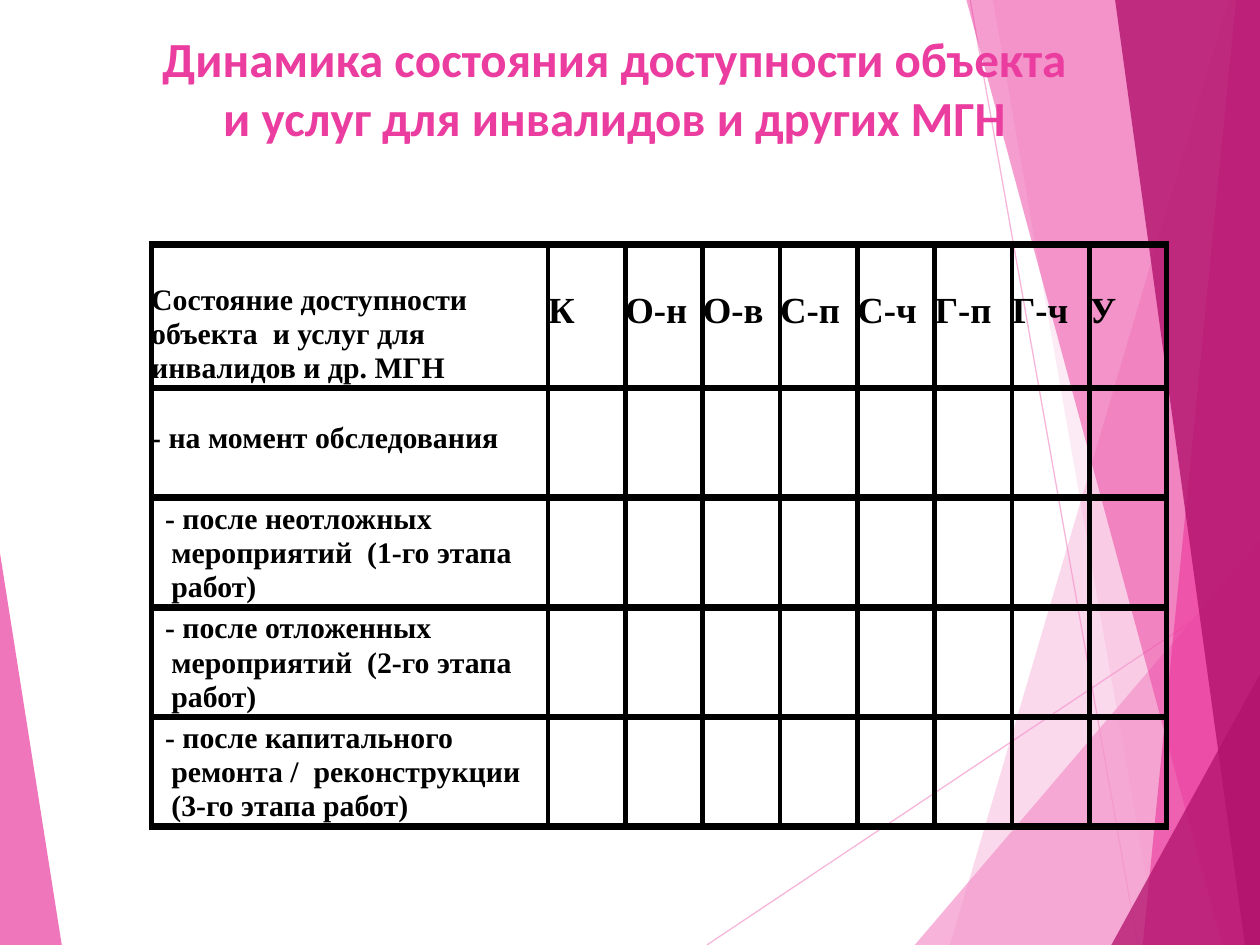
from lxml.etree import SubElement
from pptx import Presentation
from pptx.dml.color import RGBColor
from pptx.enum.text import MSO_ANCHOR, MSO_AUTO_SIZE, PP_ALIGN
from pptx.oxml import parse_xml
from pptx.oxml.ns import nsdecls, qn
from pptx.util import Inches, Pt

COLS, ROWS = 100, 75
WIDTH, HEIGHT = Inches(10), Inches(7.5)

BLACK = RGBColor(0x00, 0x00, 0x00)
LIGHT_PINK = RGBColor(0xF4, 0x96, 0xCB)
PINK = RGBColor(0xEB, 0x3D, 0x9F)
DARK_PINK = RGBColor(0xB2, 0x13, 0x6D)

TITLE = "Динамика состояния доступности объекта\vи услуг для инвалидов и других МГН"
HEADER = "Состояние доступности объекта  и услуг для инвалидов и др. МГН"
STATES = ["К", "О-н", "О-в", "С-п", "С-ч", "Г-п", "Г-ч", "У"]
SURVEY = "- на момент обследования"
STAGES = [
    "- после неотложных мероприятий  (1-го этапа работ)",
    "- после отложенных мероприятий  (2-го этапа работ)",
    "- после капитального ремонта /  реконструкции (3-го этапа работ)",
]

RAYS = [((56.1, 75), (100, 45.7)), ((77, 0), (90.3, 75))]
FACETS = [
    ([(97.5, 0), (75.4, 75), (100, 75), (100, 0)], LIGHT_PINK, 36),
    ([(78.8, 0), (91.9, 75), (100, 75), (100, 0)], LIGHT_PINK, 20),
    ([(72.6, 75), (100, 42.9), (100, 75)], LIGHT_PINK, 72),
    ([(76.7, 0), (97, 75), (100, 75), (100, 0)], PINK, 50),
    ([(98.1, 0), (90.7, 75), (100, 75), (100, 0)], PINK, 66),
    ([(88.5, 0), (98.8, 75), (100, 75), (100, 0)], DARK_PINK, 80),
    ([(88.2, 75), (100, 53.5), (100, 75)], DARK_PINK, 76),
    ([(0, 43.9), (4.9, 75), (0, 75)], PINK, 70),
]


def x(cols):
    return round(WIDTH * cols / COLS)


def y(rows):
    return round(HEIGHT * rows / ROWS)


def set_opacity(shape, percent):
    for clr in shape._element.spPr.iter(qn("a:srgbClr")):
        SubElement(clr, qn("a:alpha"), val=str(percent * 1000))


def write(tf, text, size, font, color, align=PP_ALIGN.LEFT, leading=None,
          before=0, indent=(0, 0)):
    """Fill a text frame; indent is (left margin, first line) in columns."""
    tf.word_wrap = True
    tf.text = text
    p = tf.paragraphs[0]
    p.alignment = align
    p.space_before = Pt(before)
    if leading:
        p.line_spacing = Pt(leading)
    pPr = p._p.get_or_add_pPr()
    pPr.set("marL", str(x(indent[0])))
    pPr.set("indent", str(x(indent[1])))
    for r in p.runs:
        r.font.size = Pt(size)
        r.font.name = font
        r.font.bold = True
        r.font.color.rgb = color


class Deck:
    title_font = "Calibri"
    table_font = "Times New Roman"
    side_border, level_border = 3, 4.25

    def __init__(self):
        self.prs = Presentation()
        self.prs.slide_width, self.prs.slide_height = WIDTH, HEIGHT
        self.s = self.prs.slides.add_slide(self.prs.slide_layouts[5])

    def ray(self, start, end):
        line = self.s.shapes.add_connector(
            1, x(start[0]), y(start[1]), x(end[0]), y(end[1]))
        line.line.color.rgb = LIGHT_PINK
        line.line.width = Pt(0.75)
        SubElement(line._element.spPr, qn("a:effectLst"))
        set_opacity(line, 70)

    def facet(self, points, color, opacity):
        corners = [(x(col), y(row)) for col, row in points]
        builder = self.s.shapes.build_freeform(*corners[0])
        builder.add_line_segments(corners[1:], close=True)
        sp = builder.convert_to_shape()
        sp.shadow.inherit = False
        sp.line.fill.background()
        sp.fill.solid()
        sp.fill.fore_color.rgb = color
        set_opacity(sp, opacity)

    def title(self, text, left, top, width, height):
        """Format the title placeholder and bring it to the front."""
        sp = self.s.shapes.title
        self.s.shapes._spTree.append(sp._element)
        sp.left, sp.top, sp.width, sp.height = x(left), y(top), x(width), y(height)
        tf = sp.text_frame
        tf.auto_size = MSO_AUTO_SIZE.NONE
        tf.vertical_anchor = MSO_ANCHOR.TOP
        tf.margin_left = tf.margin_right = tf.margin_bottom = 0
        tf.margin_top = y(0.1)
        write(tf, text, 28, self.title_font, PINK, align=PP_ALIGN.CENTER)

    def table(self, left, top, widths, heights):
        frame = self.s.shapes.add_table(
            len(heights), len(widths), x(left), y(top), x(sum(widths)), y(sum(heights)))
        table = frame.table
        table.first_row = table.horz_banding = False
        for column, width in zip(table.columns, widths):
            column.width = x(width)
        for row, height in zip(table.rows, heights):
            row.height = y(height)
        for cell in table.iter_cells():
            cell.fill.background()
            cell.margin_left = cell.margin_right = cell.margin_top = cell.margin_bottom = 0
            self.borders(cell)
        return table

    def borders(self, cell):
        tcPr = cell._tc.get_or_add_tcPr()
        for i, side in enumerate("LRTB"):
            points = self.side_border if side in "LR" else self.level_border
            tcPr.insert(i, parse_xml(
                f'<a:ln{side} {nsdecls("a")} w="{Pt(points)}"><a:solidFill>'
                f'<a:srgbClr val="{BLACK}"/></a:solidFill></a:ln{side}>'))

    def cell(self, cell, text, size=17, drop=0, **style):
        """Write a cell whose text starts drop rows below its top edge."""
        cell.margin_top = y(drop)
        write(cell.text_frame, text, size, self.table_font, BLACK, **style)


def main():
    deck = Deck()
    for start, end in RAYS:
        deck.ray(start, end)
    for points, color, opacity in FACETS:
        deck.facet(points, color, opacity)
    deck.title(TITLE, 7.5, 2.2, 82.5, 9.6)

    table = deck.table(12, 19.4, [31.5] + [6.14] * len(STATES),
                       [11.4] + [8.7] * (1 + len(STAGES)))
    deck.cell(table.cell(0, 0), HEADER, drop=3, leading=19.6)
    for col, state in enumerate(STATES, 1):
        deck.cell(table.cell(0, col), state, size=21, drop=3.7)
    deck.cell(table.cell(1, 0), SURVEY, drop=2.7)
    for row, stage in enumerate(STAGES, 2):
        deck.cell(table.cell(row, 0), stage, drop=0.3, leading=19.6,
                  before=2, indent=(1.6, -0.5))
    deck.prs.save("out.pptx")


if __name__ == "__main__":
    main()
